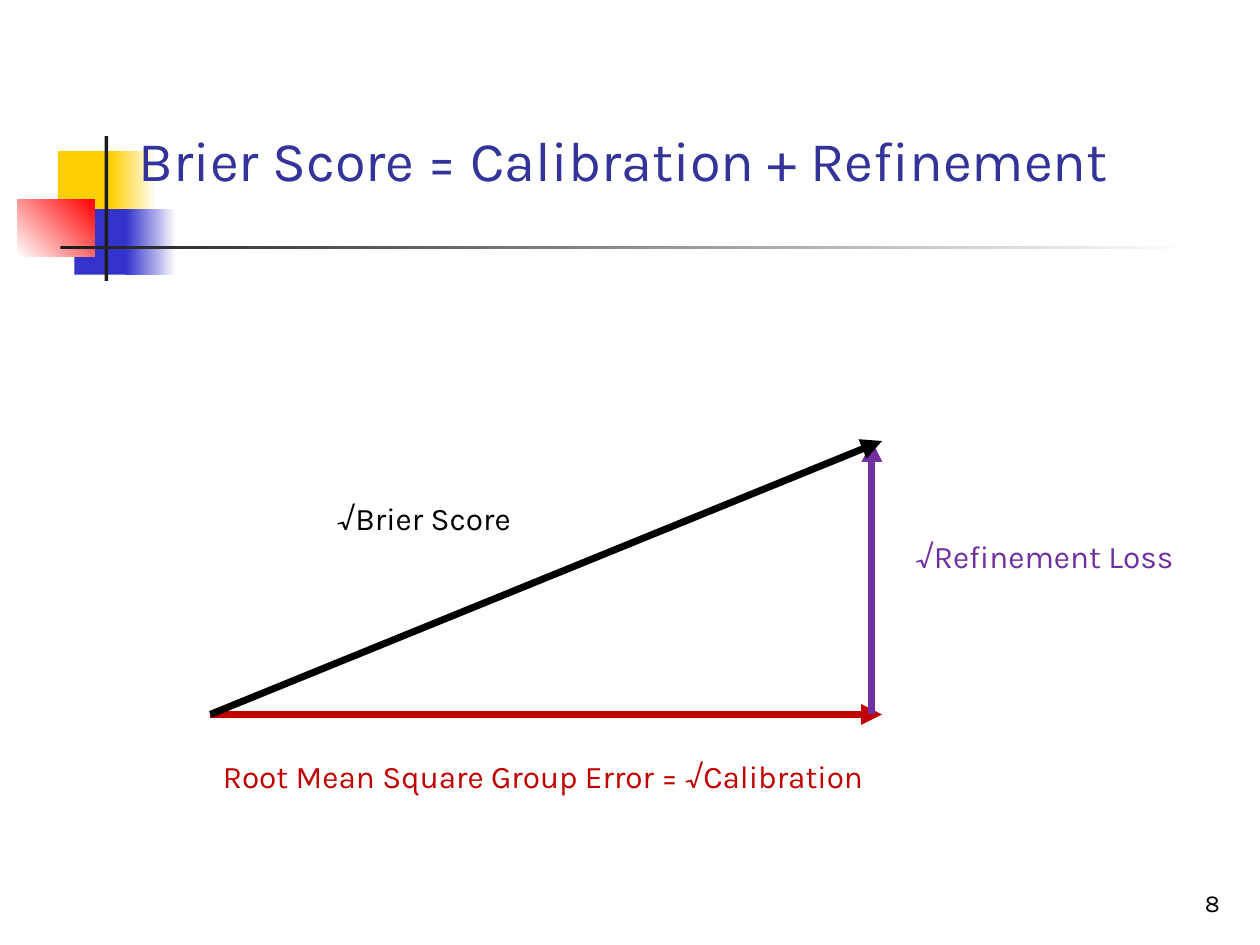
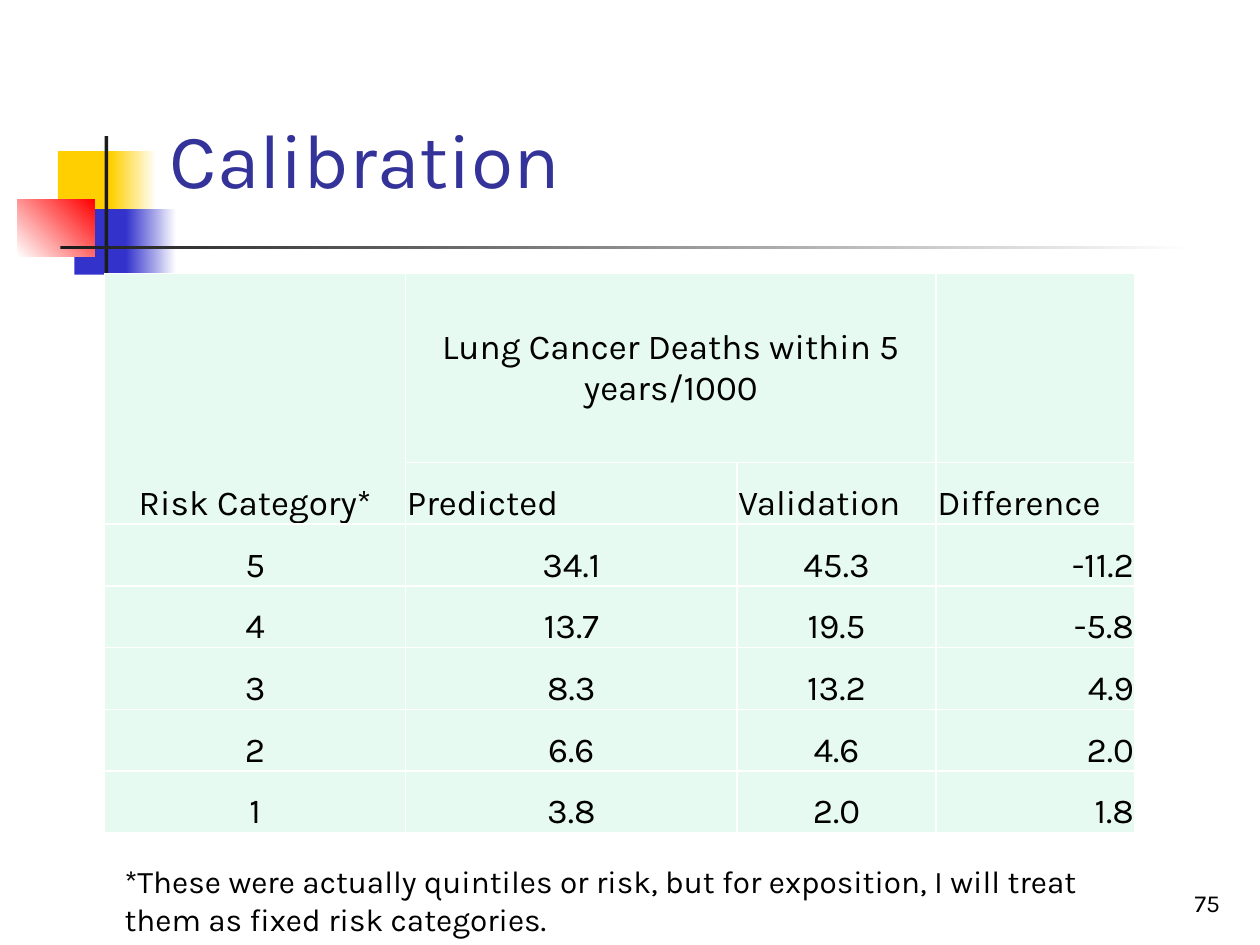
"""Build two slides on the Brier score and on calibration."""
import dataclasses

import lxml.etree
import pptx
import pptx.dml.color
import pptx.enum.shapes
import pptx.enum.text
import pptx.oxml.ns
import pptx.util

Inches = pptx.util.Inches
ALIGN = pptx.enum.text.PP_ALIGN
ANCHOR = pptx.enum.text.MSO_ANCHOR


@dataclasses.dataclass(frozen=True)
class Theme:
    """Colours, font and type sizes used by every slide."""

    font: str = "Karla"
    title: str = "333399"
    text: str = "000000"
    white: str = "FFFFFF"
    yellow: str = "FFCF01"
    blue: str = "3333CC"
    red: str = "FF0000"
    rule: str = "1C1C1C"
    calibration: str = "C00000"
    refinement: str = "7030A0"
    cell: str = "E7FAF1"
    long_title_size: int = 32
    title_size: int = 44
    body_size: int = 18
    table_size: int = 20
    number_size: int = 14


THEME = Theme()


def rgb(colour):
    """Return a colour object for a hexadecimal string."""
    return pptx.dml.color.RGBColor.from_string(colour)


def add_child(parent, tag, **attributes):
    """Append a drawing element to a parent and return it."""
    return lxml.etree.SubElement(parent, pptx.oxml.ns.qn(tag), attributes)


def style_text(frame, text, size, colour, align=ALIGN.LEFT):
    """Fill a text frame with one styled paragraph."""
    paragraph = frame.paragraphs[0]
    paragraph.text = text
    paragraph.alignment = align
    paragraph.font.name = THEME.font
    paragraph.font.size = pptx.util.Pt(size)
    paragraph.font.color.rgb = rgb(colour)


def add_text(slide, place, text, size, colour=THEME.text, align=ALIGN.LEFT, anchor=ANCHOR.TOP):
    """Add a wrapping text box."""
    box = slide.shapes.add_textbox(*map(Inches, place))
    box.text_frame.word_wrap = True
    box.text_frame.vertical_anchor = anchor
    style_text(box.text_frame, text, size, colour, align)


def add_block(slide, place, start, end=None, angle=0):
    """Add a borderless rectangle with a plain or gradient fill."""
    block = slide.shapes.add_shape(
        pptx.enum.shapes.MSO_SHAPE.RECTANGLE, *map(Inches, place))
    block.shadow.inherit = False
    block.line.fill.background()
    if end is None:
        block.fill.solid()
        block.fill.fore_color.rgb = rgb(start)
        return
    block.fill.gradient()
    block.fill.gradient_angle = angle
    for stop, colour in zip(block.fill.gradient_stops, (start, end)):
        stop.color.rgb = rgb(colour)


def add_arrow(slide, start, end, colour):
    """Add a thick straight arrow between two points."""
    arrow = slide.shapes.add_connector(
        pptx.enum.shapes.MSO_CONNECTOR.STRAIGHT, *map(Inches, start + end))
    arrow.line.width = pptx.util.Pt(4)
    arrow.line.color.rgb = rgb(colour)
    add_child(arrow.line._get_or_add_ln(), "a:tailEnd", type="triangle")
    add_child(arrow.element.spPr, "a:effectLst")


def add_page(deck, title, title_place, title_size, number):
    """Add a slide with the shared ornament, its title and its number."""
    slide = deck.slides.add_slide(deck.slide_layouts[6])
    add_block(slide, (0.46, 1.2, 0.48, 0.52), THEME.yellow)
    add_block(slide, (0.88, 1.2, 0.36, 0.52), THEME.yellow, THEME.white)
    add_block(slide, (0.59, 1.66, 0.46, 0.52), THEME.blue)
    add_block(slide, (1, 1.66, 0.4, 0.52), THEME.blue, THEME.white)
    add_block(slide, (0.14, 1.58, 0.61, 0.46), THEME.white, THEME.red, 45)
    add_block(slide, (0.83, 1.08, 0.03, 1.15), THEME.rule)
    add_block(slide, (0.48, 1.95, 9, 0.03), THEME.rule, THEME.white)
    add_text(slide, title_place, title, title_size, THEME.title, anchor=ANCHOR.BOTTOM)
    add_text(slide, (7.7, 6.83, 2.08, 0.5), number, THEME.number_size,
             align=ALIGN.RIGHT, anchor=ANCHOR.BOTTOM)
    return slide


def style_cell(cell, text, align, anchor):
    """Set the text, margins, borders and fill of a table cell."""
    cell.margin_left = cell.margin_right = cell.margin_top = Inches(0.01)
    cell.margin_bottom = 0
    cell.vertical_anchor = anchor
    properties = cell._tc.get_or_add_tcPr()
    for side in ("a:lnL", "a:lnR", "a:lnT", "a:lnB"):
        border = add_child(properties, side, w=str(pptx.util.Pt(1)))
        add_child(add_child(border, "a:solidFill"), "a:srgbClr", val=THEME.white)
    cell.fill.solid()
    cell.fill.fore_color.rgb = rgb(THEME.cell)
    style_text(cell.text_frame, text, THEME.table_size, THEME.text, align)


def add_risk_table(slide, place, widths, heights, rows):
    """Add the risk table with its two merged headings."""
    table = slide.shapes.add_table(len(rows), len(widths), *map(Inches, place)).table
    table.first_row = table.horz_banding = False
    for column, width in zip(table.columns, widths):
        column.width = Inches(width)
    for row, height in zip(table.rows, heights):
        row.height = Inches(height)
    value_aligns = (ALIGN.CENTER, ALIGN.CENTER, ALIGN.CENTER, ALIGN.RIGHT)
    for row_index, values in enumerate(rows):
        for column_index, value in enumerate(values):
            align = ALIGN.LEFT if row_index == 1 else value_aligns[column_index]
            anchor = ANCHOR.MIDDLE if (row_index, column_index) == (0, 1) else ANCHOR.BOTTOM
            style_cell(table.cell(row_index, column_index), value, align, anchor)
    table.cell(0, 0).merge(table.cell(1, 0))
    table.cell(0, 1).merge(table.cell(0, 2))


def build_score_slide(deck):
    """Show the Brier score as the long side of a right triangle."""
    slide = add_page(deck, "Brier Score = Calibration + Refinement",
                     (1, 0.33, 8.42, 1.25), THEME.long_title_size, "8")
    origin, top = (1.67, 5.67), 3.5
    add_arrow(slide, origin, (7, 5.67), THEME.calibration)
    add_arrow(slide, (6.92, 5.67), (6.92, top), THEME.refinement)
    add_arrow(slide, origin, (7, top), THEME.text)
    labels = (
        ((1.67, 5.96, 5.73, 0.42), "Root Mean Square Group Error = √Calibration", THEME.calibration),
        ((7.17, 4.21, 2.25, 0.42), "√Refinement Loss", THEME.refinement),
        ((2.58, 3.91, 2.17, 0.42), "√Brier Score", THEME.text),
    )
    for place, text, colour in labels:
        add_text(slide, place, text, THEME.body_size, colour)


def build_calibration_slide(deck):
    """Compare predicted and observed deaths by risk category."""
    slide = add_page(deck, "Calibration", (1.25, 0.42, 7.5, 1.25), THEME.title_size, "75")
    rows = (
        ("Risk Category*", "Lung Cancer Deaths within 5 years/1000", "", ""),
        ("", "Predicted", "Validation", "Difference"),
        ("5", "34.1", "45.3", "-11.2"),
        ("4", "13.7", "19.5", "-5.8"),
        ("3", "8.3", "13.2", "4.9"),
        ("2", "6.6", "4.6", "2.0"),
        ("1", "3.8", "2.0", "1.8"),
    )
    heights = [1.5] + [0.49] * (len(rows) - 1)
    add_risk_table(slide, (0.83, 2.17, 8.17, 4.46), (2.39, 2.63, 1.58, 1.58), heights, rows)
    add_text(slide, (0.89, 6.79, 7.83, 0.71),
             "*These were actually quintiles or risk, but for exposition, "
             "I will treat them as fixed risk categories.", THEME.body_size)


def main():
    """Build and save the deck."""
    deck = pptx.Presentation()
    deck.slide_width, deck.slide_height = Inches(10), Inches(7.5)
    build_score_slide(deck)
    build_calibration_slide(deck)
    deck.save("out.pptx")


if __name__ == "__main__":
    main()
